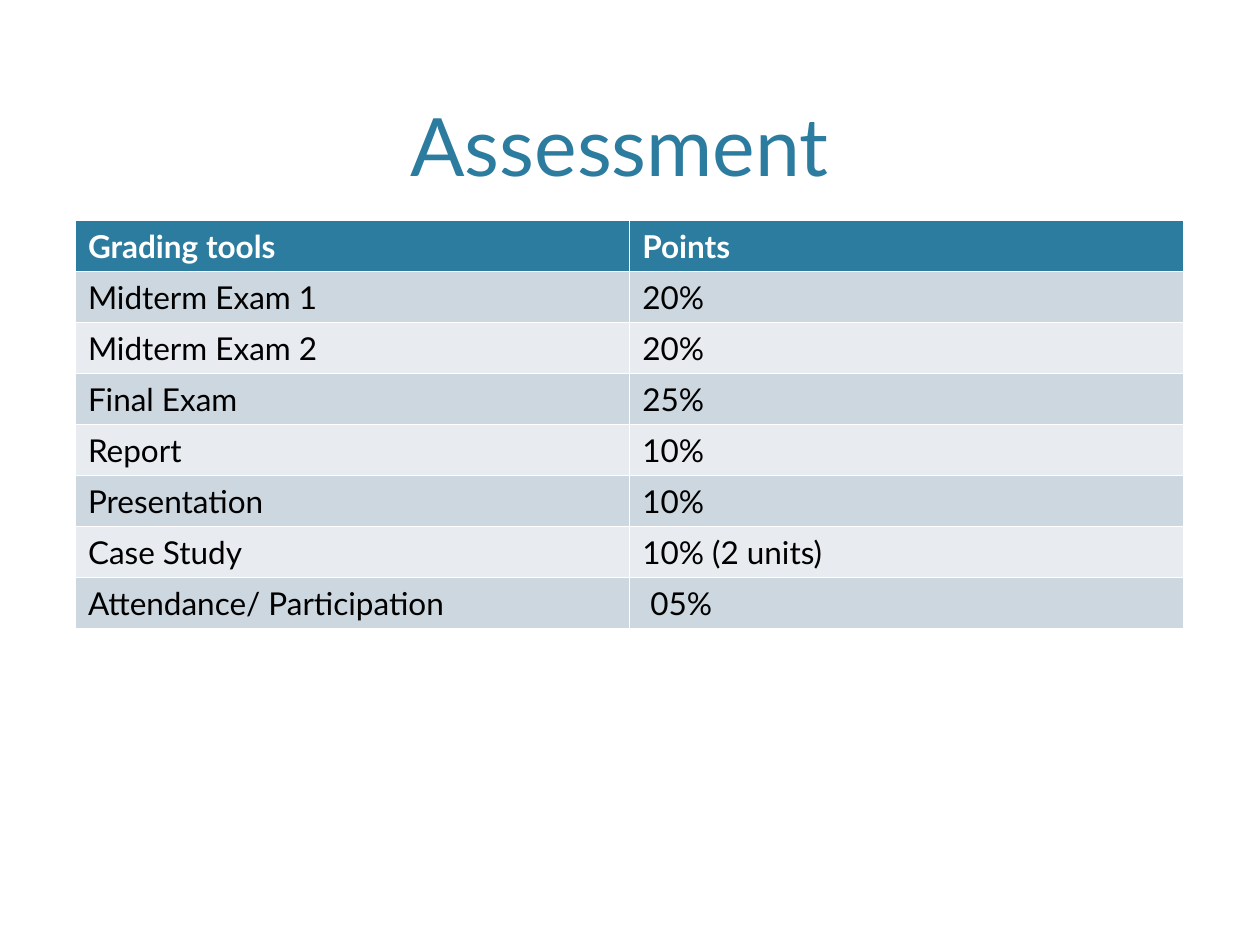
"""Build the course assessment slide with its grading table."""
from dataclasses import dataclass
from typing import NamedTuple

from pptx import Presentation
from pptx import util as u
from pptx.dml.color import RGBColor
from pptx.enum import text


@dataclass(frozen=True)
class Theme:
    """Colours, font and type sizes of the slide."""
    accent: str = "2C7C9F"
    header_text: str = "FFFFFF"
    body_text: str = "000000"
    bands: tuple[str, str] = ("CDD7DF", "E8ECF0")
    font: str = "Lato"
    title_size: int = 46
    table_size: int = 18


class Grade(NamedTuple):
    """A grading tool and its share of the points."""
    tool: str
    points: str


THEME = Theme()
LEFT, WIDTH = u.Cm(1.52), u.Cm(22.35)
HEADER = Grade("Grading tools", "Points")
GRADES = [
    Grade("Midterm Exam 1", "20%"),
    Grade("Midterm Exam 2", "20%"),
    Grade("Final Exam", "25%"),
    Grade("Report", "10%"),
    Grade("Presentation", "10%"),
    Grade("Case Study", "10% (2 units)"),
    Grade("Attendance/ Participation", " 05%"),
]


def write_text(frame, content: str, *, size: int, color: str, bold: bool = False,
               align=text.PP_ALIGN.LEFT) -> None:
    """Write one formatted paragraph into a text frame."""
    paragraph = frame.paragraphs[0]
    paragraph.alignment = align
    run = paragraph.add_run()
    run.text = content
    run.font.name = THEME.font
    run.font.size = u.Pt(size)
    run.font.bold = bold
    run.font.color.rgb = RGBColor.from_string(color)


def add_title(slide, content: str) -> None:
    """Place and fill the title placeholder."""
    title = slide.shapes.title
    title.left, title.top, title.width, title.height = LEFT, u.Cm(0.3), WIDTH, u.Cm(3.71)
    frame = title.text_frame
    frame.auto_size = text.MSO_AUTO_SIZE.NONE
    frame.vertical_anchor = text.MSO_ANCHOR.BOTTOM
    write_text(frame, content, size=THEME.title_size, color=THEME.accent,
               align=text.PP_ALIGN.CENTER)


def fill_row(row, grade: Grade, *, fill: str, color: str, bold: bool = False) -> None:
    """Fill the cells of one table row."""
    for cell, content in zip(row.cells, grade):
        cell.fill.solid()
        cell.fill.fore_color.rgb = RGBColor.from_string(fill)
        write_text(cell.text_frame, content, size=THEME.table_size, color=color, bold=bold)


def add_grade_table(slide, header: Grade, grades: list[Grade]) -> None:
    """Add the grading table with a header and banded rows."""
    table = slide.shapes.add_table(len(grades) + 1, len(header), LEFT, u.Cm(4.45),
                                   WIDTH, u.Cm(8.23)).table
    header_row, *body_rows = table.rows
    fill_row(header_row, header, fill=THEME.accent, color=THEME.header_text, bold=True)
    for index, (row, grade) in enumerate(zip(body_rows, grades)):
        fill_row(row, grade, fill=THEME.bands[index % 2], color=THEME.body_text)


def main() -> None:
    """Create and save the presentation."""
    presentation = Presentation()
    presentation.slide_width, presentation.slide_height = u.Cm(25.4), u.Cm(19.05)
    slide = presentation.slides.add_slide(presentation.slide_layouts[5])
    add_title(slide, "Assessment ")
    add_grade_table(slide, HEADER, GRADES)
    presentation.save("out.pptx")


if __name__ == "__main__":
    main()
